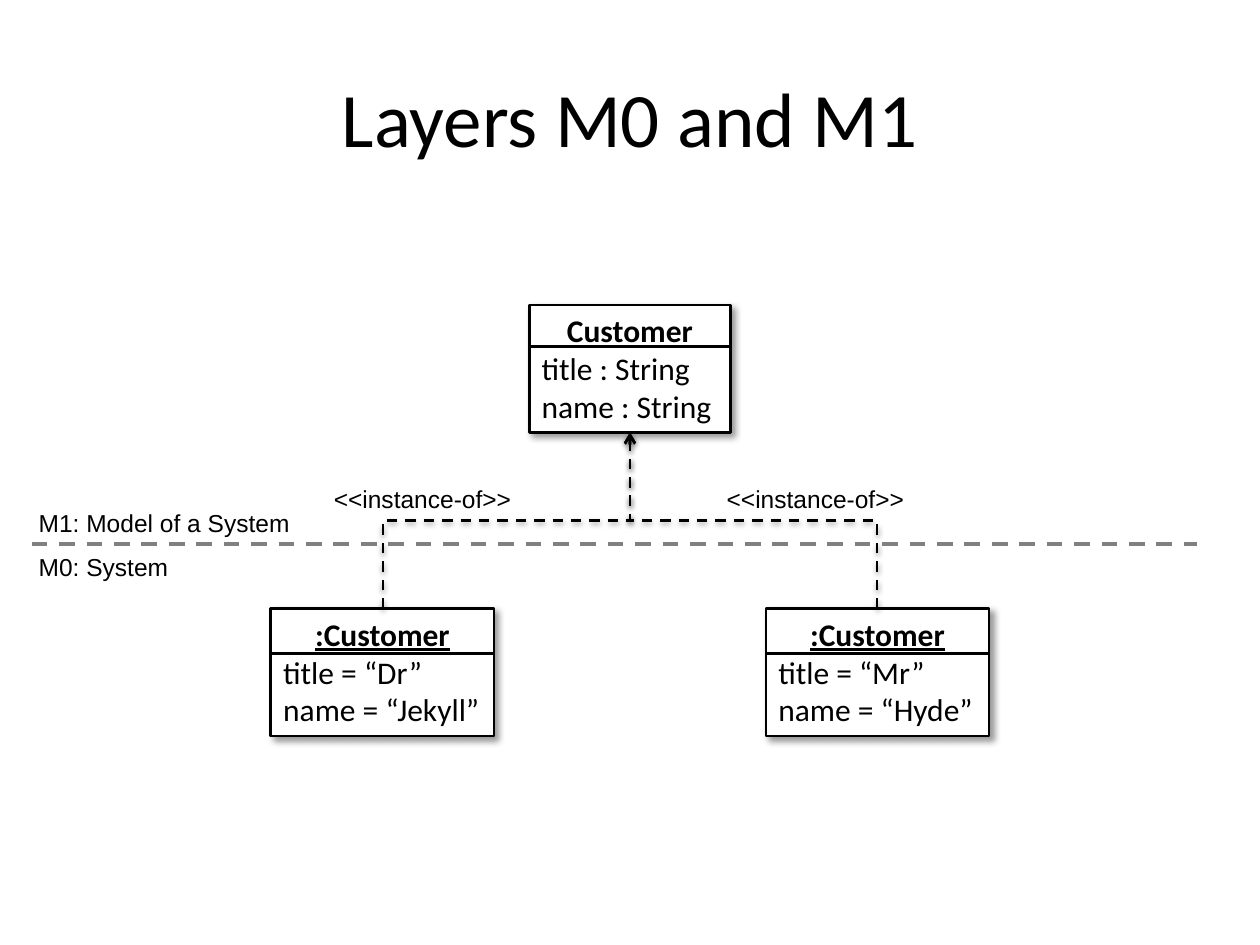
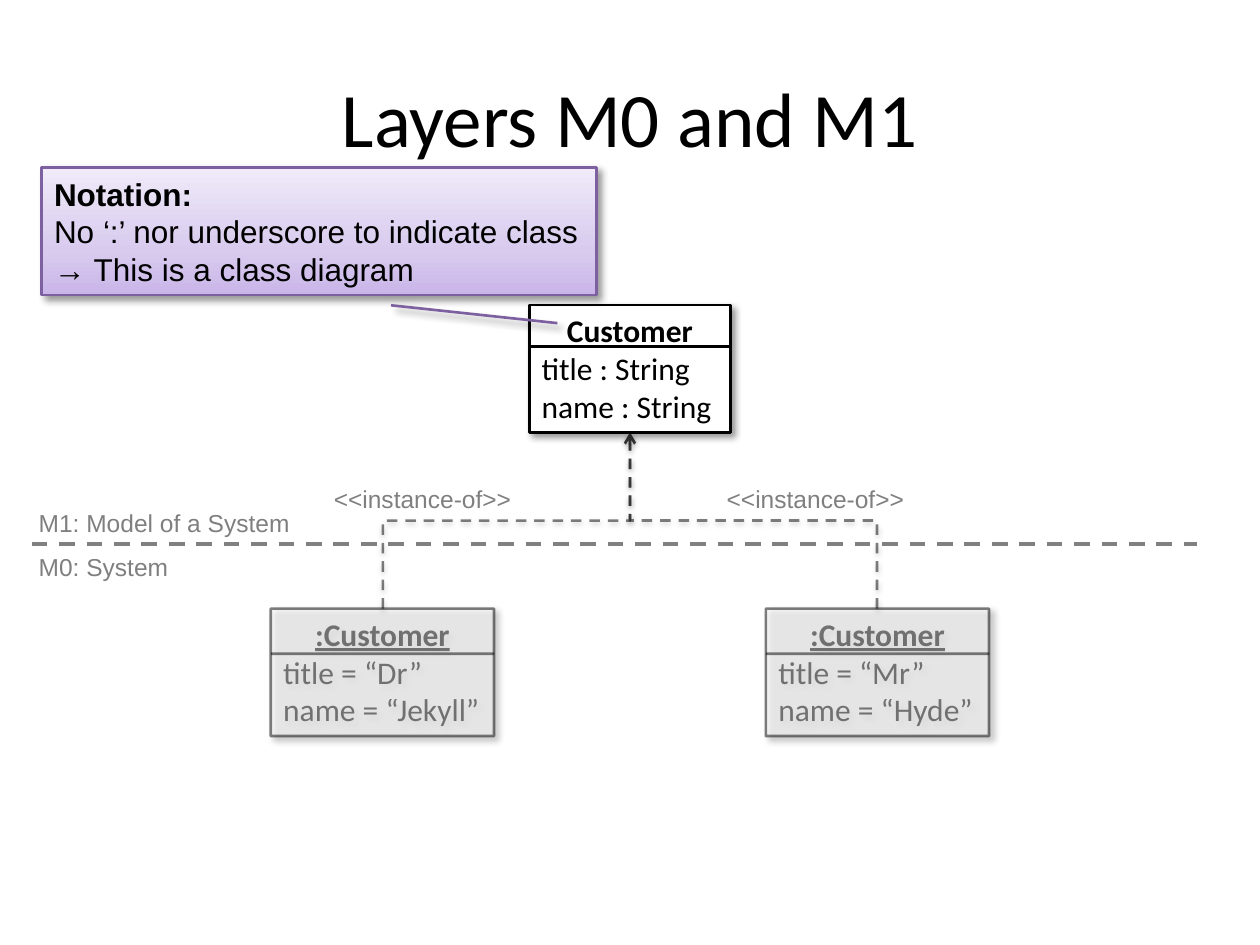
from dataclasses import dataclass

from lxml import etree
from pptx import Presentation
from pptx import util as u
from pptx.dml.color import RGBColor
from pptx.enum import dml, shapes, text
from pptx.oxml.ns import qn

BLACK, WHITE, GREY, PURPLE = "000000", "FFFFFF", "808080", "7D60A0"
GRAD = [(0, "C9B5E8"), (35, "D8CBEE"), (100, "F0EAF9")]
# Shadows: opacity %, blur pt, distance pt, angle
BOX_SHADE = (40, 4, 3, 45)
LINK_SHADE = (38, 3.1, 1.6, 90)
MID = 12.7


@dataclass
class Card:
    """A UML box: heading, fields and a rule below the heading."""
    left: float
    top: float
    width: float
    rule: float
    lines: list[str]
    under: bool = False


@dataclass
class Label:
    left: float
    top: float
    width: float
    words: str


CLASS = Card(10.67, 6.15, 4.06, 0.84, ["Customer", "title : String", "name : String"])
ITEMS = [
    Card(left, 12.27, 4.5, 0.91, [":Customer", f"title = “{title}”", f"name = “{name}”"], True)
    for left, title, name in [(5.46, "Dr", "Jekyll"), (15.44, "Mr", "Hyde")]
]
LABELS = [
    Label(6.48, 9.63, 4.09, "<<instance-of>>"),
    Label(14.4, 9.63, 4.09, "<<instance-of>>"),
    Label(0.53, 10.11, 5.59, "M1: Model of a System"),
    Label(0.53, 11, 3.15, "M0: System"),
]
NOTE = ["Notation:", "No ‘:’ nor underscore to indicate class", "→ This is a class diagram"]
HIGH = 2.57


def rgb(code: str) -> RGBColor:
    return RGBColor.from_string(code)


def cm(*sizes: float) -> list[u.Length]:
    return [u.Cm(size) for size in sizes]


def node(parent, tag: str, **attrs):
    return etree.SubElement(parent, qn(tag), {key: str(val) for key, val in attrs.items()})


def shade(shape, look: tuple | None = None) -> None:
    """Set the shadow, or none; call after fill and line."""
    effects = node(shape._element.spPr, "a:effectLst")
    if look:
        alpha, blur, dist, angle = look
        outer = node(effects, "a:outerShdw", blurRad=u.Pt(blur), dist=u.Pt(dist),
                     dir=angle * 60000, algn="tl", rotWithShape=0)
        node(node(outer, "a:srgbClr", val=BLACK), "a:alpha", val=alpha * 1000)


def fade(shape, dim: bool) -> None:
    """Make every colour of the shape half transparent, save its shadow."""
    if dim:
        for color in shape._element.iter(qn("a:srgbClr")):
            if len(color) == 0:
                node(color, "a:alpha", val=50000)


def stroke(line, color: str = BLACK, width: float = 1.5, dash: bool = False) -> None:
    line.color.rgb = rgb(color)
    line.width = u.Pt(width)
    if dash:
        line.dash_style = dml.MSO_LINE.DASH


def write(shape, lines: list[str], *, font: str = "Arial", size: float = 14,
          bold: bool = False, under: bool = False, center: bool = False,
          grow: bool = True, middle: bool = False) -> None:
    """Fill a shape with text; bold, under and center format the first line."""
    frame = shape.text_frame
    frame.word_wrap = not grow
    if grow:
        frame.auto_size = text.MSO_AUTO_SIZE.SHAPE_TO_FIT_TEXT
    frame.vertical_anchor = text.MSO_ANCHOR.MIDDLE if middle else text.MSO_ANCHOR.TOP
    for n, words in enumerate(lines):
        para = frame.add_paragraph() if n else frame.paragraphs[0]
        first = n == 0
        para.alignment = text.PP_ALIGN.CENTER if first and center else text.PP_ALIGN.LEFT
        run = para.add_run()
        run.text = words
        run.font.name, run.font.size = font, u.Pt(size)
        run.font.color.rgb = rgb(BLACK)
        run.font.bold = first and bold
        run.font.underline = first and under


def rule(group, x1: float, x2: float, y: float, **look):
    line = group.add_connector(shapes.MSO_CONNECTOR.STRAIGHT, *cm(x1, y, x2, y))
    stroke(line.line, **look)
    shade(line)
    return line


def draw_card(slide, card: Card, dim: bool) -> None:
    group = slide.shapes.add_group_shape().shapes
    box = group.add_shape(shapes.MSO_SHAPE.RECTANGLE,
                          *cm(card.left, card.top, card.width, HIGH))
    box.fill.solid()
    box.fill.fore_color.rgb = rgb(WHITE)
    stroke(box.line)
    shade(box, BOX_SHADE)
    write(box, card.lines, font="Calibri", size=18, bold=True, under=card.under, center=True)
    fade(box, dim)
    fade(rule(group, card.left, card.left + card.width, card.top + card.rule), dim)


def draw_link(slide, side: int, dim: bool) -> None:
    """Elbow arrow from an instance (side -1 left, 1 right) up to the class."""
    low, high, reach = 12.27, CLASS.top + HIGH, 4.98
    x, y = MID + side * reach / 2, (low + high) / 2
    # The elbow is laid out sideways, then turned to leave vertically
    dx, dy = -side * (low - high) / 2, reach / 2
    link = slide.shapes.add_connector(shapes.MSO_CONNECTOR.ELBOW,
                                      *cm(x + dx, y + dy, x - dx, y - dy))
    turn = 90 if side < 0 else 270
    link._element.spPr.find(qn("a:xfrm")).set("rot", str(turn * 60000))
    stroke(link.line, dash=True)
    node(link._element.spPr.find(qn("a:ln")), "a:tailEnd", type="arrow")
    shade(link, LINK_SHADE)
    fade(link, dim)


def draw_label(slide, label: Label, dim: bool) -> None:
    box = slide.shapes.add_textbox(*cm(label.left, label.top, label.width, 0.86))
    write(box, [label.words])
    fade(box, dim)


def draw_note(slide) -> None:
    note = slide.shapes.add_shape(shapes.MSO_SHAPE.LINE_CALLOUT_1,
                                  *cm(0.84, 3.38, 11.18, HIGH))
    for n, value in enumerate([1.08, 0.63, 1.22, 0.93]):
        note.adjustments[n] = value
    note.fill.gradient()
    note.fill.gradient_angle = 90
    stops = note._element.spPr.find(qn("a:gradFill")).find(qn("a:gsLst"))
    for stop in list(stops):
        stops.remove(stop)
    for place, color in GRAD:
        node(node(stops, "a:gs", pos=place * 1000), "a:srgbClr", val=color)
    stroke(note.line, PURPLE)
    shade(note, BOX_SHADE)
    write(note, NOTE, size=18, bold=True, middle=True)


def draw_slide(deck, dim: bool) -> None:
    """The layer diagram; dim fades all but the class, and a note is added."""
    slide = deck.slides.add_slide(deck.slide_layouts[6])
    title = slide.shapes.add_textbox(*cm(1.27, 0.76, 22.86, 3.18))
    write(title, ["Layers M0 and M1"], font="Calibri", size=44,
          center=True, grow=False, middle=True)
    # Class and its instances
    draw_card(slide, CLASS, False)
    for item in ITEMS:
        draw_card(slide, item, dim)
    for side in (-1, 1):
        draw_link(slide, side, dim)
    # Border between the layers
    rule(slide.shapes, 0.64, 24.13, 10.97, color=GREY, width=2.25, dash=True)
    for label in LABELS:
        draw_label(slide, label, dim)
    if dim:
        draw_note(slide)


def main() -> None:
    deck = Presentation()
    deck.slide_width, deck.slide_height = cm(25.4, 19.05)
    for dim in (False, True):
        draw_slide(deck, dim)
    deck.save("out.pptx")


if __name__ == "__main__":
    main()
